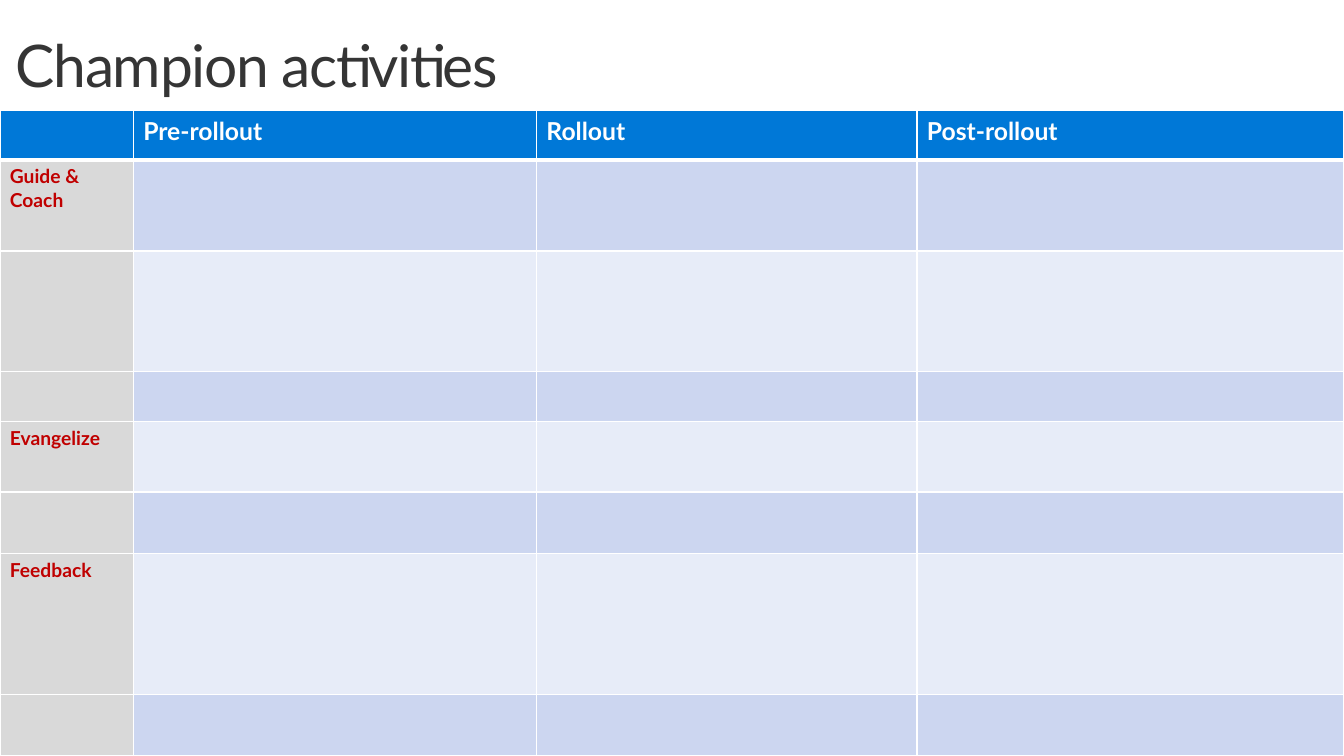
import pptx
import pptx.dml.color
import pptx.enum.text
import pptx.oxml
import pptx.oxml.ns
import pptx.util

EMU_PER_PX = 9144
COLUMN_WIDTHS = [135, 408, 385, 432]
ROW_HEIGHTS = [50, 92, 122, 51, 71, 62, 143, 62]
PHASES = ["", "Pre-rollout", "Rollout", "Post-rollout"]
ACTIVITIES = {1: "Guide & Coach", 4: "Evangelize", 6: "Feedback"}
HEADER_FILL = "0078D7"
ACTIVITY_FILL = "D9D9D9"
BAND_FILLS = ["E7ECF8", "CCD6F0"]


def px(length):
    return pptx.util.Emu(length * EMU_PER_PX)


def color(hex_value):
    return pptx.dml.color.RGBColor.from_string(hex_value)


presentation = pptx.Presentation()
presentation.slide_width = px(1360)
presentation.slide_height = px(765)
slide = presentation.slides.add_slide(presentation.slide_layouts[5])

title = slide.shapes.title
title_box = {"left": 0, "top": 27, "width": 1300, "height": 100}
for name, length in title_box.items():
    setattr(title, name, px(length))

frame = title.text_frame
frame_format = {
    "margin_left": px(16),
    "margin_right": px(16),
    "margin_top": px(10),
    "margin_bottom": px(10),
    "word_wrap": True,
    "auto_size": pptx.enum.text.MSO_AUTO_SIZE.NONE,
    "vertical_anchor": pptx.enum.text.MSO_ANCHOR.TOP,
}
for name, value in frame_format.items():
    setattr(frame, name, value)

paragraph = frame.paragraphs[0]
paragraph.alignment = pptx.enum.text.PP_ALIGN.LEFT
paragraph.line_spacing = 0.9
run = paragraph.add_run()
run.text = "Champion activities"
for name, value in {"name": "Lato", "size": pptx.util.Pt(42.8)}.items():
    setattr(run.font, name, value)
run.font.color.rgb = color("353535")
run.font._element.set("spc", "-100")

table = slide.shapes.add_table(
    len(ROW_HEIGHTS), len(COLUMN_WIDTHS), px(0), px(112), px(1360), px(653)
).table
for column, width in zip(table.columns, COLUMN_WIDTHS):
    column.width = px(width)

for row_index, height in enumerate(ROW_HEIGHTS):
    table.rows[row_index].height = px(height)
    for column_index, phase in enumerate(PHASES):
        cell = table.cell(row_index, column_index)
        text, size, text_color = "", 14, "C00000"
        if row_index == 0:
            text, size, text_color = phase, 18, "FFFFFF"
            fill = HEADER_FILL
        elif column_index == 0:
            text = ACTIVITIES.get(row_index, "")
            fill = ACTIVITY_FILL
        else:
            fill = BAND_FILLS[row_index % 2]

        border_widths = {"L": 1, "R": 1, "T": 1, "B": 1}
        if row_index == 0:
            border_widths["B"] = 3
        elif row_index == 1:
            border_widths["T"] = 3
        properties = cell._tc.get_or_add_tcPr()
        for side, points in border_widths.items():
            properties.append(pptx.oxml.parse_xml(
                f'<a:ln{side} {pptx.oxml.ns.nsdecls("a")} w="{pptx.util.Pt(points)}">'
                '<a:solidFill><a:srgbClr val="FFFFFF"/></a:solidFill>'
                f'</a:ln{side}>'
            ))
        cell.fill.solid()
        cell.fill.fore_color.rgb = color(fill)

        if text:
            run = cell.text_frame.paragraphs[0].add_run()
            run.text = text
            font_format = {"name": "Lato", "size": pptx.util.Pt(size), "bold": True}
            for name, value in font_format.items():
                setattr(run.font, name, value)
            run.font.color.rgb = color(text_color)

presentation.save("out.pptx")
